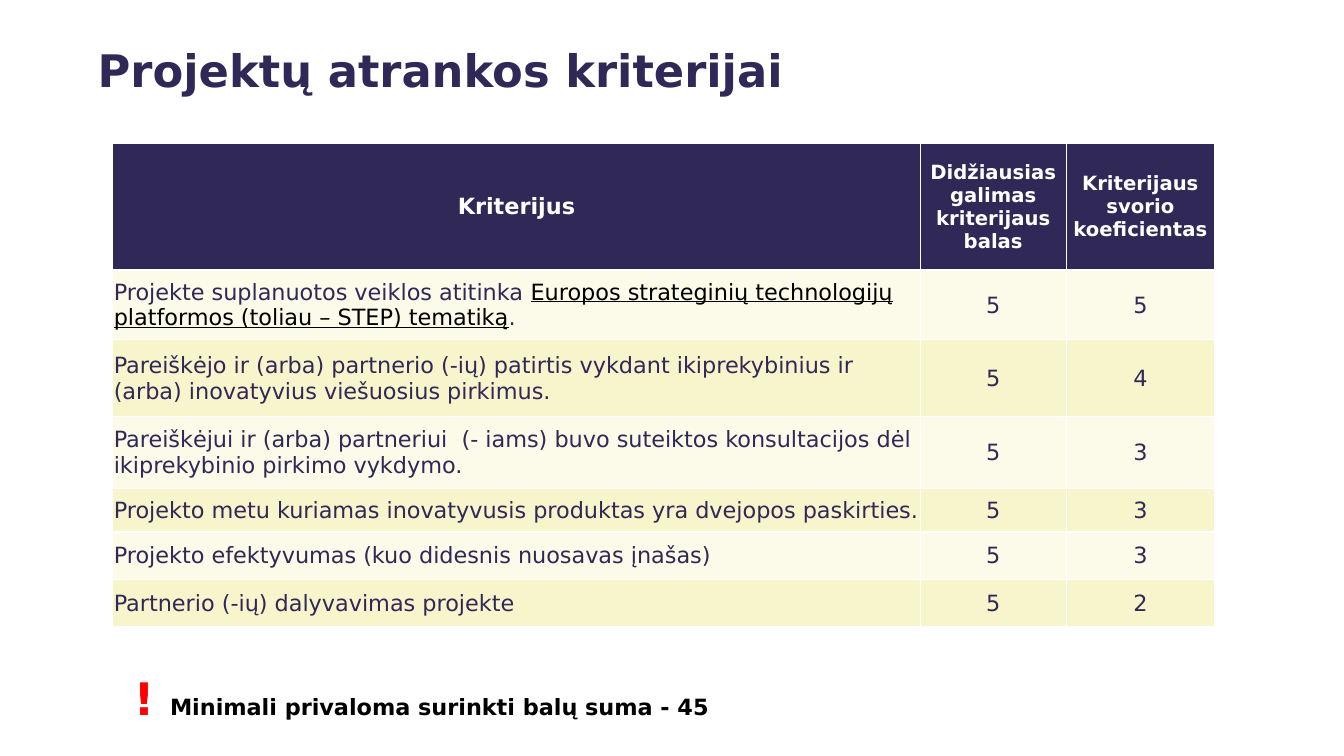
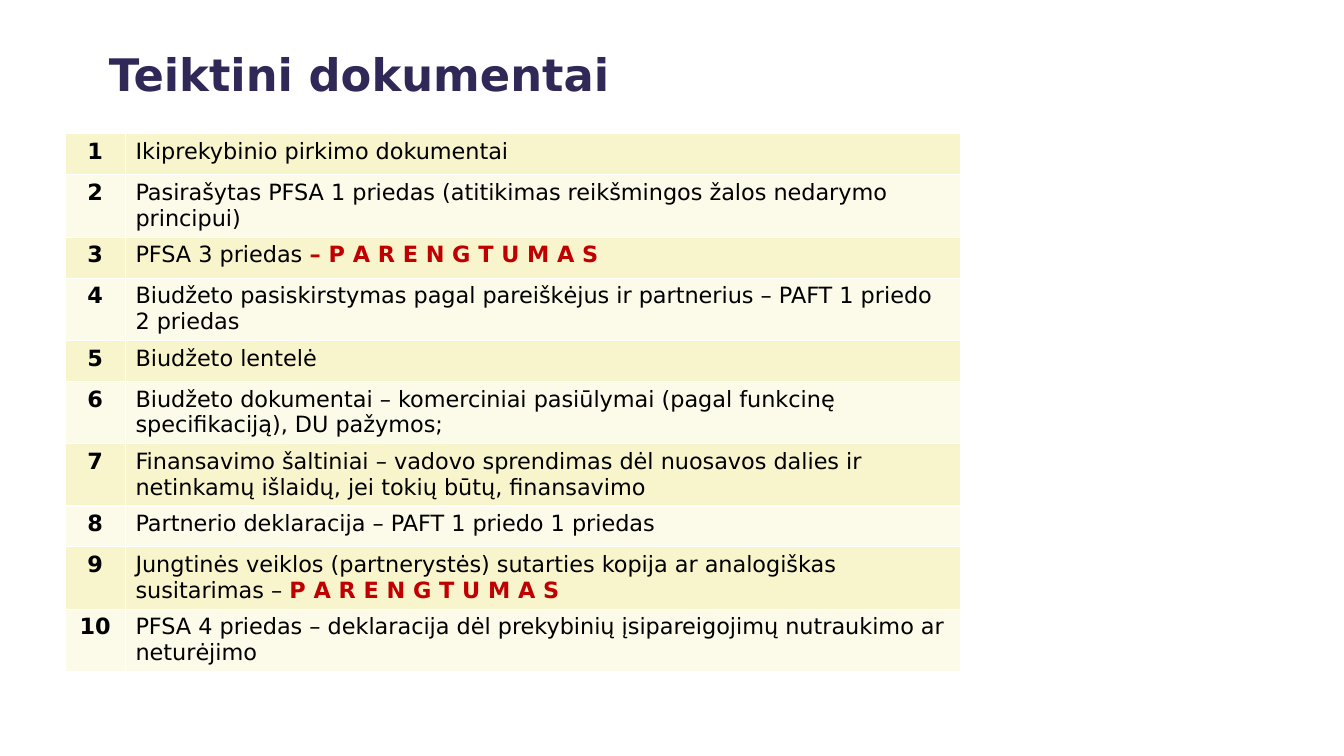
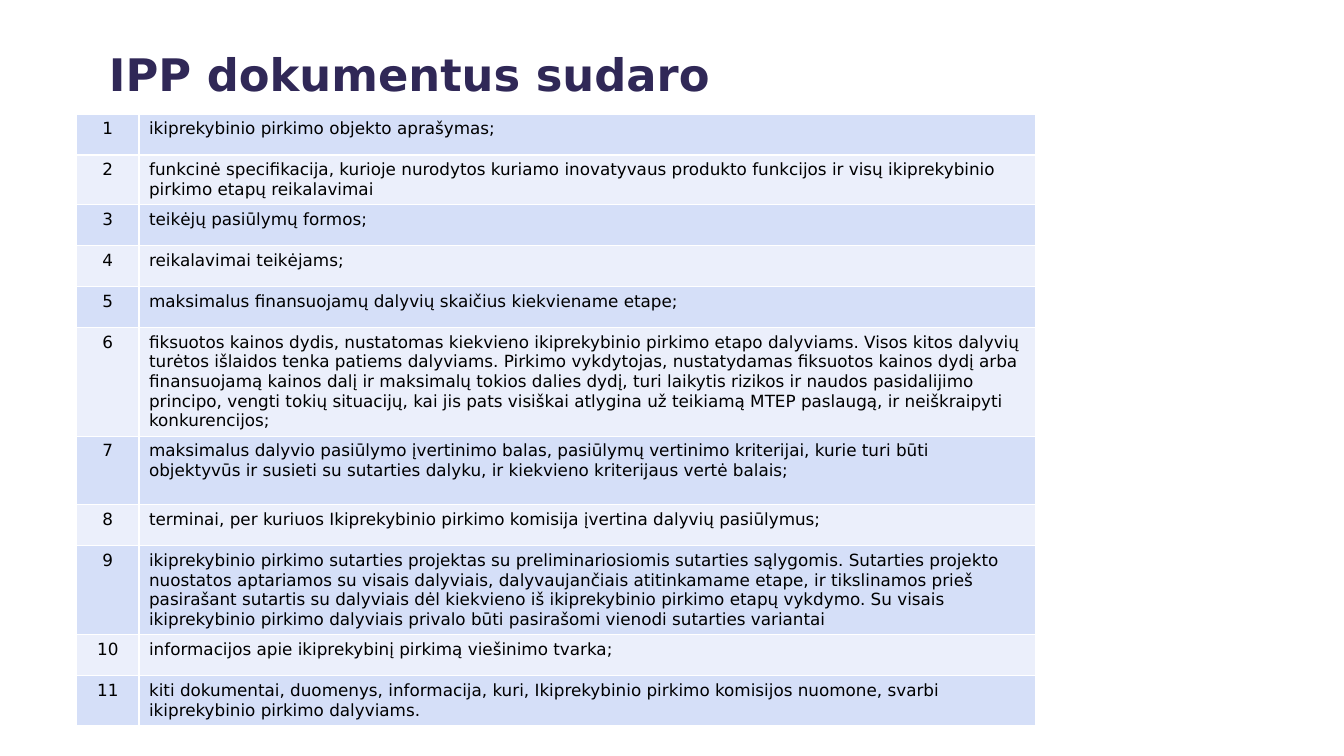
from lxml import etree
from pptx import Presentation
from pptx.dml.color import RGBColor
from pptx.enum.text import MSO_ANCHOR, MSO_AUTO_SIZE, PP_ALIGN
from pptx.oxml.ns import qn
from pptx.util import Pt

LEFT, CENTER, JUSTIFY = PP_ALIGN.LEFT, PP_ALIGN.CENTER, PP_ALIGN.JUSTIFY
TOP, MIDDLE = MSO_ANCHOR.TOP, MSO_ANCHOR.MIDDLE
NO_AUTOFIT, GROW = MSO_AUTO_SIZE.NONE, MSO_AUTO_SIZE.SHAPE_TO_FIT_TEXT
TITLE_ONLY = 5

FONT = "DejaVu Sans"
NAVY, TITLE_NAVY = "302957", "302857"
BLACK, WHITE, RED, DARK_RED = "000000", "FFFFFF", "FF0000", "C00000"
CREAM, PALE_CREAM = "F8F5CD", "FCFAE8"
BLUE, PALE_BLUE = "D5DFF8", "EBEFFB"

BORDER, HEADER_BORDER = 1, 1.5
MIN_ROW, LINE_FACTOR, CELL_PADDING = 29.3, 1.165, 7.2

CRITERIA_HEADER = ["Kriterijus", "Didžiausias galimas kriterijaus balas",
                   "Kriterijaus svorio koeficientas"]
# text, weight, row height
CRITERIA = [
    ([("Projekte suplanuotos veiklos atitinka ", {}),
      ("Europos strateginių technologijų platformos (toliau – STEP) tematiką",
       {"color": BLACK, "underline": True}),
      (".", {})], "5", 49.7),
    ("Pareiškėjo ir (arba) partnerio (-ių) patirtis vykdant ikiprekybinius ir "
     "(arba) inovatyvius viešuosius pirkimus.", "4", 54.7),
    ("Pareiškėjui ir (arba) partneriui  (- iams) buvo suteiktos konsultacijos dėl "
     "ikiprekybinio pirkimo vykdymo.", "3", 51.8),
    ("Projekto metu kuriamas inovatyvusis produktas yra dvejopos paskirties.", "3", 31),
    ("Projekto efektyvumas (kuo didesnis nuosavas įnašas)", "3", 33.8),
    ("Partnerio (-ių) dalyvavimas projekte", "2", 33.8),
]
MAX_SCORE = "5"

READINESS = {"color": DARK_RED, "bold": True}
# text, lines it takes
DOCUMENTS = [
    ("Ikiprekybinio pirkimo dokumentai", 1),
    ("Pasirašytas PFSA 1 priedas (atitikimas reikšmingos žalos nedarymo principui)", 2),
    ([("PFSA 3 priedas ", {}), ("– P A R E N G T U M A S", READINESS)], 1),
    ("Biudžeto pasiskirstymas pagal pareiškėjus ir partnerius – PAFT 1 priedo "
     "2 priedas", 2),
    ("Biudžeto lentelė", 1),
    ("Biudžeto dokumentai – komerciniai pasiūlymai (pagal funkcinę specifikaciją), "
     "DU pažymos;", 2),
    ("Finansavimo šaltiniai – vadovo sprendimas dėl nuosavos dalies ir netinkamų "
     "išlaidų, jei tokių būtų, finansavimo", 2),
    ("Partnerio deklaracija – PAFT 1 priedo 1 priedas", 1),
    ([("Jungtinės veiklos (partnerystės) sutarties kopija ar analogiškas susitarimas – ", {}),
      ("P A R E N G T U M A S", READINESS)], 2),
    ("PFSA 4 priedas – deklaracija dėl prekybinių įsipareigojimų nutraukimo ar "
     "neturėjimo", 2),
]
PROCUREMENT_PARTS = [
    ("ikiprekybinio pirkimo objekto aprašymas;", 1),
    ("funkcinė specifikacija, kurioje nurodytos kuriamo inovatyvaus produkto funkcijos "
     "ir visų ikiprekybinio pirkimo etapų reikalavimai", 2),
    ("teikėjų pasiūlymų formos;", 1),
    ("reikalavimai teikėjams;", 1),
    ("maksimalus finansuojamų dalyvių skaičius kiekviename etape;", 1),
    ("fiksuotos kainos dydis, nustatomas kiekvieno ikiprekybinio pirkimo etapo dalyviams. "
     "Visos kitos dalyvių turėtos išlaidos tenka patiems dalyviams. Pirkimo vykdytojas, "
     "nustatydamas fiksuotos kainos dydį arba finansuojamą kainos dalį ir maksimalų tokios "
     "dalies dydį, turi laikytis rizikos ir naudos pasidalijimo principo, vengti tokių "
     "situacijų, kai jis pats visiškai atlygina už teikiamą MTEP paslaugą, ir neiškraipyti "
     "konkurencijos;", 5),
    ("maksimalus dalyvio pasiūlymo įvertinimo balas, pasiūlymų vertinimo kriterijai, kurie "
     "turi būti objektyvūs ir susieti su sutarties dalyku, ir kiekvieno kriterijaus vertė "
     "balais;", 3),
    ("terminai, per kuriuos Ikiprekybinio pirkimo komisija įvertina dalyvių pasiūlymus;", 1),
    ("ikiprekybinio pirkimo sutarties projektas su preliminariosiomis sutarties sąlygomis. "
     "Sutarties projekto nuostatos aptariamos su visais dalyviais, dalyvaujančiais "
     "atitinkamame etape, ir tikslinamos prieš pasirašant sutartis su dalyviais dėl kiekvieno "
     "iš ikiprekybinio pirkimo etapų vykdymo. Su visais ikiprekybinio pirkimo dalyviais "
     "privalo būti pasirašomi vienodi sutarties variantai", 4),
    ("informacijos apie ikiprekybinį pirkimą viešinimo tvarka;", 1),
    ("kiti dokumentai, duomenys, informacija, kuri, Ikiprekybinio pirkimo komisijos nuomone, "
     "svarbi ikiprekybinio pirkimo dalyviams.", 2),
]


def rgb(color):
    return RGBColor.from_string(color)


def write(paragraph, content, align=LEFT, **base):
    """Fill a paragraph with a string or (text, format changes) runs."""
    paragraph.alignment = align
    runs = [(content, {})] if isinstance(content, str) else content
    for text, changes in runs:
        run = paragraph.add_run()
        run.text = text
        style = {"name": FONT, "bold": False, **base, **changes}
        run.font.color.rgb = rgb(style.pop("color"))
        style["size"] = Pt(style["size"])
        for attribute, value in style.items():
            setattr(run.font, attribute, value)


def add_title_slide(prs, title, box, align=LEFT, **spacing):
    slide = prs.slides.add_slide(prs.slide_layouts[TITLE_ONLY])
    heading = slide.shapes.title
    heading.left, heading.top, heading.width, heading.height = map(Pt, box)
    frame = heading.text_frame
    frame.auto_size, frame.vertical_anchor, frame.word_wrap = NO_AUTOFIT, MIDDLE, True
    paragraph = frame.paragraphs[0]
    for attribute, value in spacing.items():
        setattr(paragraph, attribute, value)
    write(paragraph, title, align, size=32, bold=True, color=TITLE_NAVY)
    return slide


def set_borders(cell, top=BORDER, bottom=BORDER):
    properties = cell._tc.get_or_add_tcPr()
    widths = {"a:lnL": BORDER, "a:lnR": BORDER, "a:lnT": top, "a:lnB": bottom}
    for position, (tag, width) in enumerate(widths.items()):
        line = etree.Element(qn(tag), w=str(int(Pt(width))))
        fill = etree.SubElement(line, qn("a:solidFill"))
        etree.SubElement(fill, qn("a:srgbClr"), val=WHITE)
        properties.insert(position, line)


def add_plain_table(slide, left, top, columns, rows):
    size = map(Pt, (left, top, sum(columns), sum(rows)))
    table = slide.shapes.add_table(len(rows), len(columns), *size).table
    table.first_row = table.horz_banding = False
    for column, width in zip(table.columns, columns):
        column.width = Pt(width)
    for row, height in zip(table.rows, rows):
        row.height = Pt(height)
    return table


def fill_cell(cell, content, fill, align=LEFT, anchor=TOP, borders=None, **font):
    cell.fill.solid()
    cell.fill.fore_color.rgb = rgb(fill)
    cell.vertical_anchor = anchor
    set_borders(cell, **(borders or {}))
    write(cell.text_frame.paragraphs[0], content, align, **font)


def add_criteria_table(slide, left, top):
    heights = [90.7] + [height for *_, height in CRITERIA]
    table = add_plain_table(slide, left, top, [576.7, 104.4, 105.8], heights)
    for cell in table.iter_cells():
        cell.margin_left = cell.margin_top = cell.margin_right = Pt(0.7)
        cell.margin_bottom = 0
    for column, label in enumerate(CRITERIA_HEADER):
        fill_cell(table.cell(0, column), label, NAVY, CENTER, MIDDLE,
                  {"bottom": HEADER_BORDER}, size=14 if column else 16,
                  bold=True, color=WHITE)
    for row, (criterion, weight, _) in enumerate(CRITERIA, 1):
        fill = PALE_CREAM if row % 2 else CREAM
        borders = {"top": HEADER_BORDER} if row == 1 else None
        for column, content in enumerate([criterion, MAX_SCORE, weight]):
            fill_cell(table.cell(row, column), content, fill,
                      CENTER if column else LEFT, MIDDLE, borders,
                      size=16, color=NAVY)


def add_numbered_table(slide, left, top, columns, items, size, bands, bold_numbers):
    heights = [max(MIN_ROW, lines * size * LINE_FACTOR + CELL_PADDING)
               for _, lines in items]
    table = add_plain_table(slide, left, top, columns, heights)
    for row, (content, _) in enumerate(items):
        fill = bands[row % 2]
        fill_cell(table.cell(row, 0), str(row + 1), fill, CENTER,
                  size=size, color=BLACK, bold=bold_numbers)
        fill_cell(table.cell(row, 1), content, fill, size=size, color=BLACK)


def add_minimum_score(slide, box):
    frame = slide.shapes.add_textbox(*map(Pt, box)).text_frame
    frame.word_wrap, frame.auto_size = True, GROW
    write(frame.paragraphs[0],
          [("! ", {"size": 32, "color": RED}),
           ("Minimali privaloma surinkti balų suma - 45", {})],
          size=16, color=BLACK, bold=True)


def main():
    prs = Presentation()
    prs.slide_width, prs.slide_height = Pt(960), Pt(540)

    criteria = add_title_slide(prs, "Projektų atrankos kriterijai", (62.6, 14.4, 661.7, 71.3))
    add_criteria_table(criteria, 80.6, 102.2)
    add_minimum_score(criteria, (88.6, 475.2, 559.4, 46.1))

    list_title = {"box": (70.6, 15.8, 834.5, 71.3), "align": JUSTIFY,
                  "line_spacing": 1.07, "space_after": Pt(8)}
    documents = add_title_slide(prs, "Teiktini dokumentai", **list_title)
    add_numbered_table(documents, 46.4, 95.6, [43.2, 596.9], DOCUMENTS, 16,
                       (CREAM, PALE_CREAM), True)

    procurement = add_title_slide(prs, "IPP dokumentus sudaro", **list_title)
    add_numbered_table(procurement, 54.7, 81.5, [44.6, 640.1], PROCUREMENT_PARTS, 12,
                       (BLUE, PALE_BLUE), False)

    prs.save("out.pptx")


if __name__ == "__main__":
    main()
